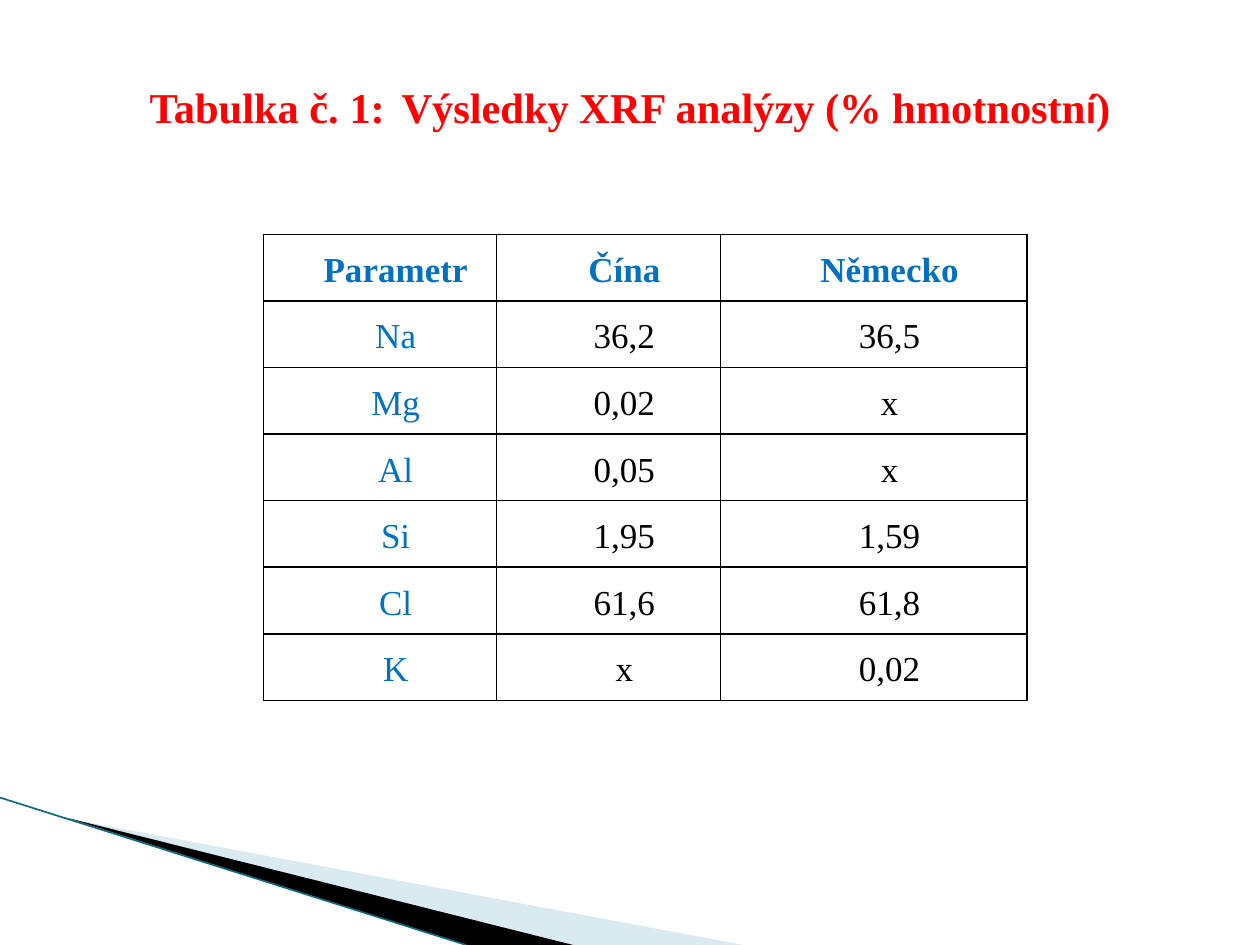
from pptx import Presentation
from pptx.dml.color import RGBColor
from pptx.enum.text import MSO_ANCHOR as Anchor, PP_ALIGN as Align
from pptx.oxml import parse_xml
from pptx.oxml.ns import nsdecls, qn
from pptx.util import Inches, Pt
from lxml.etree import SubElement


def paint(color, value):
    color.rgb = RGBColor.from_string(value)


def border(cell):
    props = cell._tc.get_or_add_tcPr()
    for n, side in enumerate(("lnL", "lnR", "lnT", "lnB")):
        props.insert(n, parse_xml(
            f'<a:{side} {nsdecls("a")} w="12700"><a:solidFill>'
            f'<a:srgbClr val="000000"/></a:solidFill></a:{side}>'))


prs = Presentation()
prs.slide_width, prs.slide_height = Inches(10), Inches(7.5)
slide = prs.slides.add_slide(prs.slide_layouts[5])
shapes = slide.shapes

# Corner wedges
wedges = [
    ([(0.55, 6.5), (5.9, 7.5), (4.56, 7.5)], "A0CBDC", 40),
    ([(0.53, 6.49), (4.55, 7.5), (3.7, 7.5)], "000000", 100),
]
for points, fill, alpha in wedges:
    corners = [(Inches(x), Inches(y)) for x, y in points]
    build = shapes.build_freeform(*corners[0])
    build.add_line_segments(corners[1:], close=True)
    wedge = build.convert_to_shape()
    wedge.shadow.inherit = False
    wedge.line.fill.background()
    wedge.fill.solid()
    paint(wedge.fill.fore_color, fill)
    if alpha < 100:
        tint = wedge._element.spPr.find(".//" + qn("a:srgbClr"))
        SubElement(tint, qn("a:alpha")).set("val", str(alpha * 1000))

edge = shapes.add_connector(1, 0, Inches(6.33), Inches(3.7), Inches(7.5))
edge.line.width = Pt(0.95)
paint(edge.line.color, "0F6A7D")
SubElement(edge._element.spPr, qn("a:effectLst"))

# Title
title = shapes.title
title.left, title.top = Inches(0.5), Inches(0.64)
title.width, title.height = Inches(9), Inches(0.87)
frame = title.text_frame
frame.vertical_anchor = Anchor.TOP
frame.margin_top = 0
head = frame.paragraphs[0]
head.alignment = Align.CENTER
head.font.size = Pt(24.3)
head.font.bold = True
paint(head.font.color, "FF0000")
for text, font in [
    ("Tabulka č. 1:\tVýsledky XRF analýzy (% hmotnostn", "Times New Roman"),
    ("í", "Calibri"),
    (")", "Times New Roman"),
]:
    run = head.add_run()
    run.text = text
    run.font.name = font

# Results table
rows = [
    ("Parametr", "Čína", "Německo"),
    ("Na", "36,2", "36,5"),
    ("Mg", "0,02", "x"),
    ("Al", "0,05", "x"),
    ("Si", "1,95", "1,59"),
    ("Cl", "61,6", "61,8"),
    ("K", "x", "0,02"),
]
widths = [1.85, 1.78, 2.43]
table = shapes.add_table(len(rows), len(widths), Inches(2.09), Inches(1.86),
                         Inches(sum(widths)), Inches(3.7)).table
for col, width in zip(table.columns, widths):
    col.width = Inches(width)
for r, row in enumerate(rows):
    table.rows[r].height = Inches(3.7 / len(rows))
    for c, text in enumerate(row):
        cell = table.cell(r, c)
        cell.fill.solid()
        paint(cell.fill.fore_color, "FFFFFF")
        border(cell)
        cell.vertical_anchor = Anchor.MIDDLE
        cell.margin_left = cell.margin_right = Inches(0.05)
        cell.margin_top = cell.margin_bottom = 0
        cell.text = text
        para = cell.text_frame.paragraphs[0]
        para.alignment = Align.CENTER
        para.line_spacing = 1.15
        para.space_after = Pt(10)
        para._p.get_or_add_pPr().set("indent", str(Inches(0.25)))
        para.font.name = "Times New Roman"
        para.font.size = Pt(20)
        para.font.bold = r == 0
        paint(para.font.color, "0070C0" if r == 0 or c == 0 else "000000")

prs.save("out.pptx")
